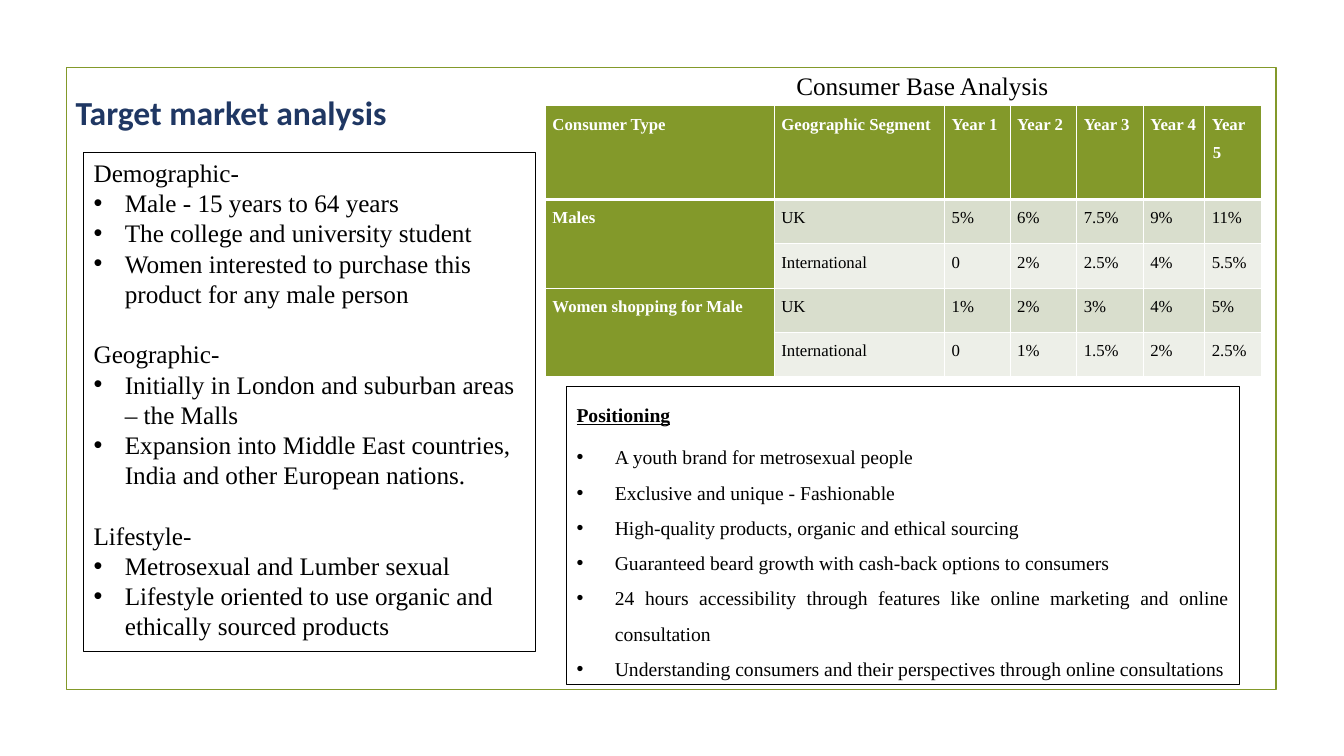
from lxml.etree import SubElement as Sub
from pptx import Presentation
from pptx.dml.color import RGBColor as Rgb
from pptx.enum.shapes import MSO_SHAPE as Kind
from pptx.enum.text import MSO_ANCHOR as Anchor, MSO_AUTO_SIZE as Auto, PP_ALIGN as Align
from pptx.oxml.ns import qn
from pptx.util import Pt

PX = 9144  # 100 px to the inch
SERIF = "Times New Roman"
HUE = {"green": "83992A", "navy": "1F3763", "black": "000000",
       "white": "FFFFFF", "dark": "D9DECD", "light": "EDEFE8"}


def write(par, text, size, hue="black", bold=False, face=SERIF):
    run = par.add_run()
    run.text = text
    font = run.font
    font.size, font.name, font.bold = Pt(size), face, bold
    font.color.rgb = Rgb.from_string(HUE[hue])
    return run


def indent(par, left, dot=False):
    props = par._p.get_or_add_pPr()
    props.set("marL", str(left * PX))
    props.set("indent", str(-left * PX))
    if dot:
        Sub(props, qn("a:buFont"), typeface="Arial")
        Sub(props, qn("a:buChar"), char="•")


deck = Presentation()
deck.slide_width, deck.slide_height = 1333 * PX, 750 * PX
slide = deck.slides.add_slide(deck.slide_layouts[5])
shapes = slide.shapes

# Title
title = shapes.title
title.left, title.top, title.width, title.height = [n * PX for n in (65, 66, 381, 64)]
frame = title.text_frame
frame.word_wrap, frame.auto_size = True, Auto.NONE
frame.vertical_anchor = Anchor.TOP
par = frame.paragraphs[0]
indent(par, 1)
par.alignment, par.line_spacing = Align.JUSTIFY, 1.5
write(par, "Target market analysis", 24, "navy", True, "Calibri")

# Slide border and the two outlined boxes
boxes = []
for spot, hue, line in [((66, 67, 1200, 617), "green", 1.25),
                        ((83, 151, 448, 495), "black", 0.75),
                        ((562, 383, 667, 296), "black", 0.75)]:
    box = shapes.add_shape(Kind.RECTANGLE, *[n * PX for n in spot])
    box.shadow.inherit = False
    box.fill.background()
    box.line.color.rgb = Rgb.from_string(HUE[hue])
    box.line.width = Pt(line)
    box.text_frame.word_wrap = True
    box.text_frame.vertical_anchor = Anchor.TOP
    boxes.append(box.text_frame)
market, place = boxes[1:]

# Target market groups
groups = {
    "Demographic-": ["Male - 15 years to 64 years",
                     "The college and university student",
                     "Women interested to purchase this product for any male person"],
    "Geographic-": ["Initially in London and suburban areas – the Malls",
                    "Expansion into Middle East countries, India and other European nations."],
    "Lifestyle-": ["Metrosexual and Lumber sexual",
                   "Lifestyle oriented to use organic and ethically sourced products"],
}
for i, (head, items) in enumerate(groups.items()):
    par = market.add_paragraph() if i else market.paragraphs[0]
    par.alignment = Align.LEFT
    if i:
        par.space_before = Pt(21.6)
    write(par, head, 18)
    for item in items:
        par = market.add_paragraph()
        indent(par, 31, True)
        par.alignment = Align.LEFT
        write(par, item, 18)

# Positioning
points = ["Positioning",
          "A youth brand for metrosexual people",
          "Exclusive and unique - Fashionable",
          "High-quality products, organic and ethical sourcing",
          "Guaranteed beard growth with cash-back options to consumers",
          "24 hours accessibility through features like online marketing and online consultation",
          "Understanding consumers and their perspectives through online consultations"]
for i, point in enumerate(points):
    par = place.add_paragraph() if i else place.paragraphs[0]
    indent(par, 38 if i else 1, i > 0)
    par.alignment, par.line_spacing = Align.JUSTIFY, 1.5
    if i in (0, len(points) - 1):
        par.space_after = Pt(5.2)
    write(par, point, 14, bold=i == 0).font.underline = i == 0

# Table caption
box = shapes.add_textbox(780 * PX, 65 * PX, 273 * PX, 40 * PX)
box.text_frame.word_wrap = False
box.text_frame.auto_size = Auto.SHAPE_TO_FIT_TEXT
write(box.text_frame.paragraphs[0], "Consumer Base Analysis", 18)

# Consumer table
rows = [
    ["Consumer Type", "Geographic Segment", "Year 1", "Year 2", "Year 3", "Year 4", "Year 5"],
    ["Males", "UK", "5%", "6%", "7.5%", "9%", "11%"],
    ["", "International", "0", "2%", "2.5%", "4%", "5.5%"],
    ["Women shopping for Male", "UK", "1%", "2%", "3%", "4%", "5%"],
    ["", "International", "0", "1%", "1.5%", "2%", "2.5%"],
]
table = shapes.add_table(5, 7, 541 * PX, 105 * PX, 710 * PX, 269 * PX).table
for col, wide in zip(table.columns, (227, 169, 65, 66, 66, 61, 56)):
    col.width = wide * PX
for row, high in zip(table.rows, (93, 44, 44, 44, 44)):
    row.height = high * PX
for r, row in enumerate(rows):
    for c, text in enumerate(row):
        cell = table.cell(r, c)
        cell.margin_left = cell.margin_right = 7 * PX
        cell.margin_top = cell.margin_bottom = 0
        props = cell._tc.get_or_add_tcPr()
        for side in "LRTB":
            thick = (r, side) in ((0, "B"), (1, "T"))
            edge = Sub(props, qn("a:ln" + side), w=str(Pt(3 if thick else 1)))
            Sub(Sub(edge, qn("a:solidFill")), qn("a:srgbClr"), val=HUE["white"])
        head = r == 0 or c == 0
        tint = "green" if head else "dark" if r % 2 else "light"
        cell.fill.solid()
        cell.fill.fore_color.rgb = Rgb.from_string(HUE[tint])
        if text:
            par = cell.text_frame.paragraphs[0]
            indent(par, 1)
            par.alignment, par.line_spacing = Align.JUSTIFY, 1.5
            par.space_after = Pt(5.2)
            write(par, text, 12, "white" if head else "black", head)
for r in (1, 3):
    table.cell(r, 0).merge(table.cell(r + 1, 0))

deck.save("out.pptx")
